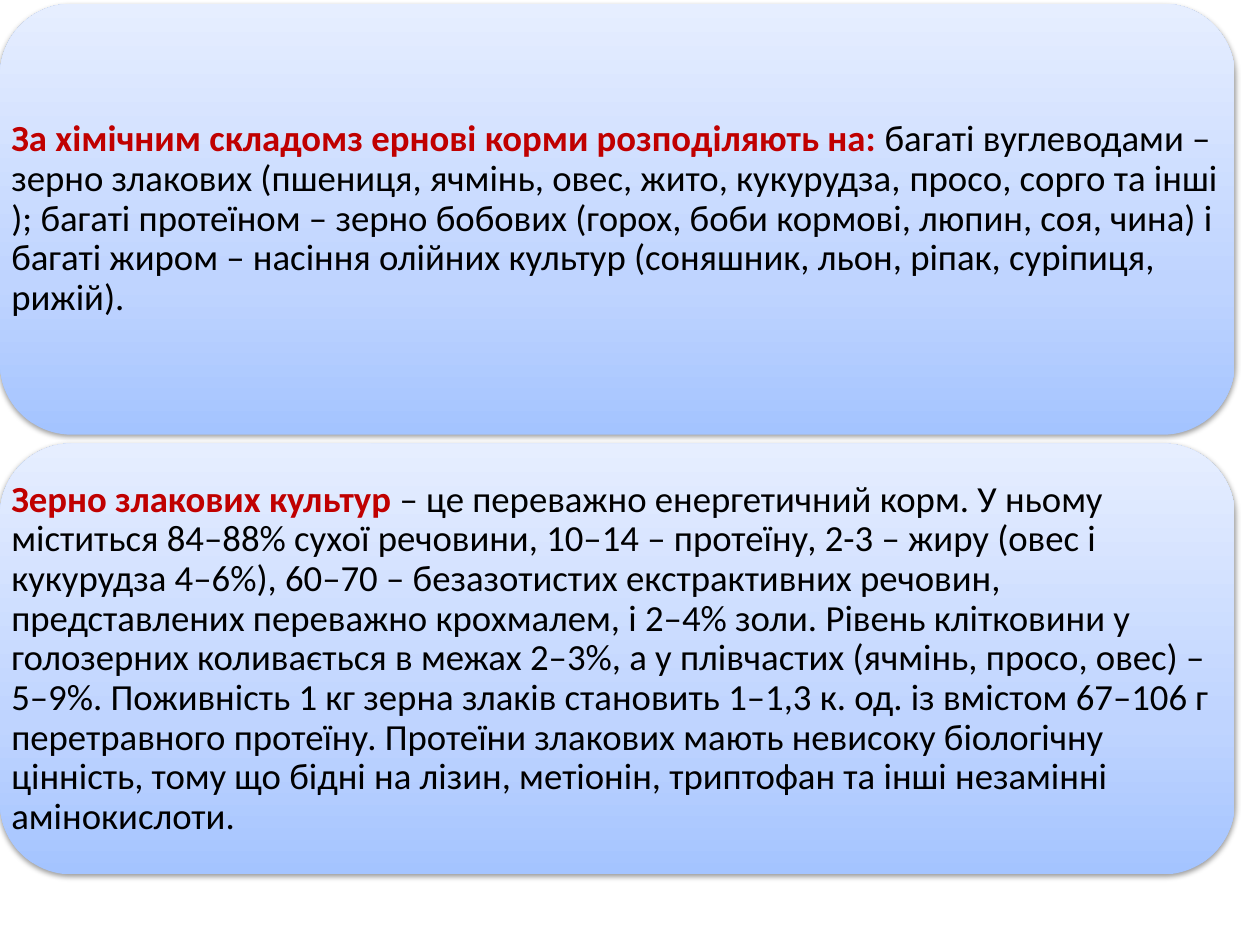
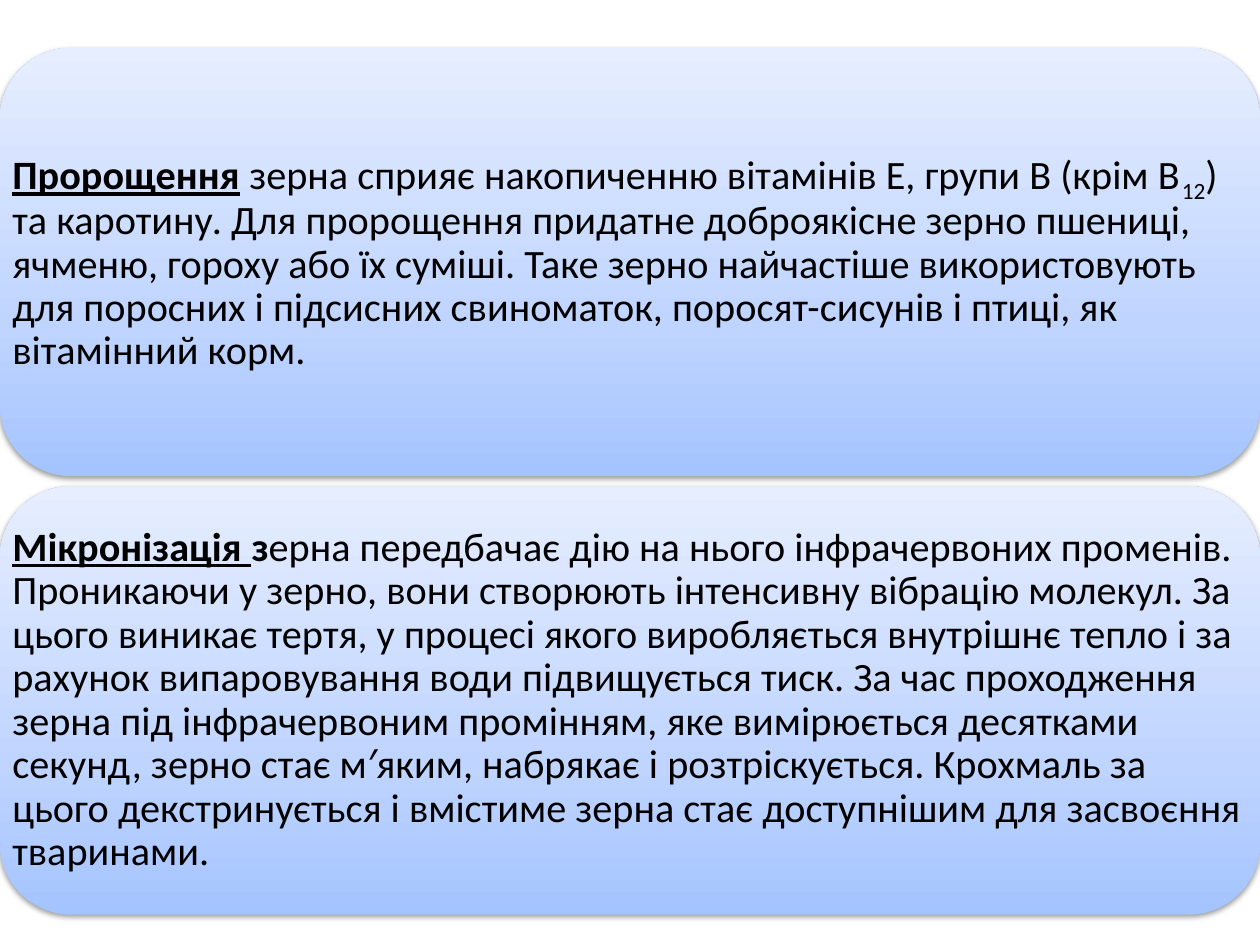
from lxml.etree import SubElement
from pptx import Presentation
from pptx.dml.color import RGBColor
from pptx.enum.shapes import MSO_SHAPE
from pptx.enum.text import MSO_ANCHOR, PP_ALIGN
from pptx.oxml import parse_xml
from pptx.oxml.ns import nsdecls, qn
from pptx.util import Inches, Pt

FONT = "Calibri"
BLACK = "000000"
RED = "C00000"
PANEL_STOPS = [(0, "A4C4FF"), (35, "BFD4FF"), (100, "E6EEFF")]
SHADOW_BLUR, SHADOW_OFFSET, SHADOW_OPACITY = 3.1, 1.6, 38

RED_TERM = {"bold": True, "color": RED}
UNDERLINED_TERM = {"bold": True, "underline": True}

SLIDES = [
    {
        "top": 0.03, "width": 9.8, "height": 3.42, "gap": 0.07,
        "size": 21, "inset": 0.09,
        "panels": [
            [
                ("За хімічним складомз ернові корми розподіляють на: ", RED_TERM),
                ("багаті вуглеводами – зерно злакових (пшениця, ячмінь, овес, "
                 "жито, кукурудза", {}),
                (", ", {"italic": True}),
                ("просо, сорго та інші ); багаті протеїном – зерно бобових "
                 "(горох, боби кормові, люпин, соя, чина) і багаті жиром – "
                 "насіння олійних культур (соняшник, льон, ріпак, суріпиця, "
                 "рижій).", {}),
            ],
            [
                ("Зерно злакових культур", RED_TERM),
                (" – це переважно енергетичний корм. У ньому міститься 84–88% "
                 "сухої речовини, 10–14 – протеїну, 2-3 – жиру (овес і "
                 "кукурудза 4–6%), 60–70 – безазотистих екстрактивних речовин, "
                 "представлених переважно крохмалем, і 2–4% золи. Рівень "
                 "клітковини у голозерних коливається в межах 2–3%, а у "
                 "плівчастих (ячмінь, просо, овес) – 5–9%. Поживність 1 кг "
                 "зерна злаків становить 1–1,3 к. од. із вмістом 67–106 г "
                 "перетравного протеїну. Протеїни злакових мають невисоку "
                 "біологічну цінність, тому що бідні на лізин, метіонін, "
                 "триптофан та інші незамінні амінокислоти.", {}),
            ],
        ],
    },
    {
        "top": 0.38, "width": 10, "height": 3.4, "gap": 0.08,
        "size": 23, "inset": 0.1,
        "panels": [
            [
                ("Пророщення", UNDERLINED_TERM),
                (" зерна сприяє накопиченню вітамінів Е, групи В (крім В", {}),
                ("12", {"baseline": -25}),
                (") та каротину. Для пророщення придатне доброякісне зерно "
                 "пшениці, ячменю, гороху або їх суміші. Таке зерно найчастіше "
                 "використовують для поросних і підсисних свиноматок, "
                 "поросят-сисунів і птиці, як вітамінний корм.", {}),
            ],
            [
                ("Мікронізація ", UNDERLINED_TERM),
                ("з", {"bold": True}),
                ("ерна передбачає дію на нього інфрачервоних променів. "
                 "Проникаючи у зерно, вони створюють інтенсивну вібрацію "
                 "молекул. За цього виникає тертя, у процесі якого "
                 "виробляється внутрішнє тепло і за рахунок випаровування води "
                 "підвищується тиск. За час проходження зерна під "
                 "інфрачервоним промінням, яке вимірюється десятками секунд, "
                 "зерно стає м′яким, набрякає і розтріскується. Крохмаль за "
                 "цього декстринується і вмістиме зерна стає доступнішим для "
                 "засвоєння тваринами.", {}),
            ],
        ],
    },
]


def rgb(hex_color):
    return RGBColor.from_string(hex_color)


def add_text(paragraph, text, size, color=BLACK, bold=False, italic=False,
             underline=False, baseline=0):
    run = paragraph.add_run()
    run.text = text
    font = run.font
    font.name, font.size = FONT, Pt(size)
    font.bold, font.italic, font.underline = bold, italic, underline
    font.color.rgb = rgb(color)
    if baseline:
        run._r.get_or_add_rPr().set("baseline", str(baseline * 1000))


def add_panel(slide, bounds):
    panel = slide.shapes.add_shape(MSO_SHAPE.ROUNDED_RECTANGLE, *bounds)
    panel.line.fill.background()
    panel.shadow.inherit = False
    properties = panel._element.spPr
    stops = "".join(
        f'<a:gs pos="{position * 1000}"><a:srgbClr val="{color}"/></a:gs>'
        for position, color in PANEL_STOPS)
    properties.find(qn("a:ln")).addprevious(parse_xml(
        f'<a:gradFill {nsdecls("a")} rotWithShape="1"><a:gsLst>{stops}</a:gsLst>'
        '<a:lin ang="16200000" scaled="0"/></a:gradFill>'))
    shadow = SubElement(
        properties.find(qn("a:effectLst")), qn("a:outerShdw"),
        blurRad=str(Pt(SHADOW_BLUR)), dist=str(Pt(SHADOW_OFFSET)),
        dir="5400000", rotWithShape="0")
    shade = SubElement(shadow, qn("a:srgbClr"), val=BLACK)
    SubElement(shade, qn("a:alpha"), val=str(SHADOW_OPACITY * 1000))


def add_passage(slide, bounds, passage, size, inset):
    frame = slide.shapes.add_textbox(*bounds).text_frame
    frame.word_wrap = True
    frame.vertical_anchor = MSO_ANCHOR.MIDDLE
    frame.margin_left = frame.margin_right = Inches(inset)
    frame.margin_top = frame.margin_bottom = Inches(inset)
    paragraph = frame.paragraphs[0]
    paragraph.alignment = PP_ALIGN.LEFT
    paragraph.line_spacing = 0.9
    for text, style in passage:
        add_text(paragraph, text, size, **style)


def main():
    deck = Presentation()
    deck.slide_width, deck.slide_height = Inches(10), Inches(7.5)
    for content in SLIDES:
        slide = deck.slides.add_slide(deck.slide_layouts[6])
        step = content["height"] + content["gap"]
        for row, passage in enumerate(content["panels"]):
            top = content["top"] + row * step
            bounds = [Inches(length) for length in
                      (0, top, content["width"], content["height"])]
            add_panel(slide, bounds)
            add_passage(slide, bounds, passage, content["size"], content["inset"])
    deck.save("out.pptx")


if __name__ == "__main__":
    main()
